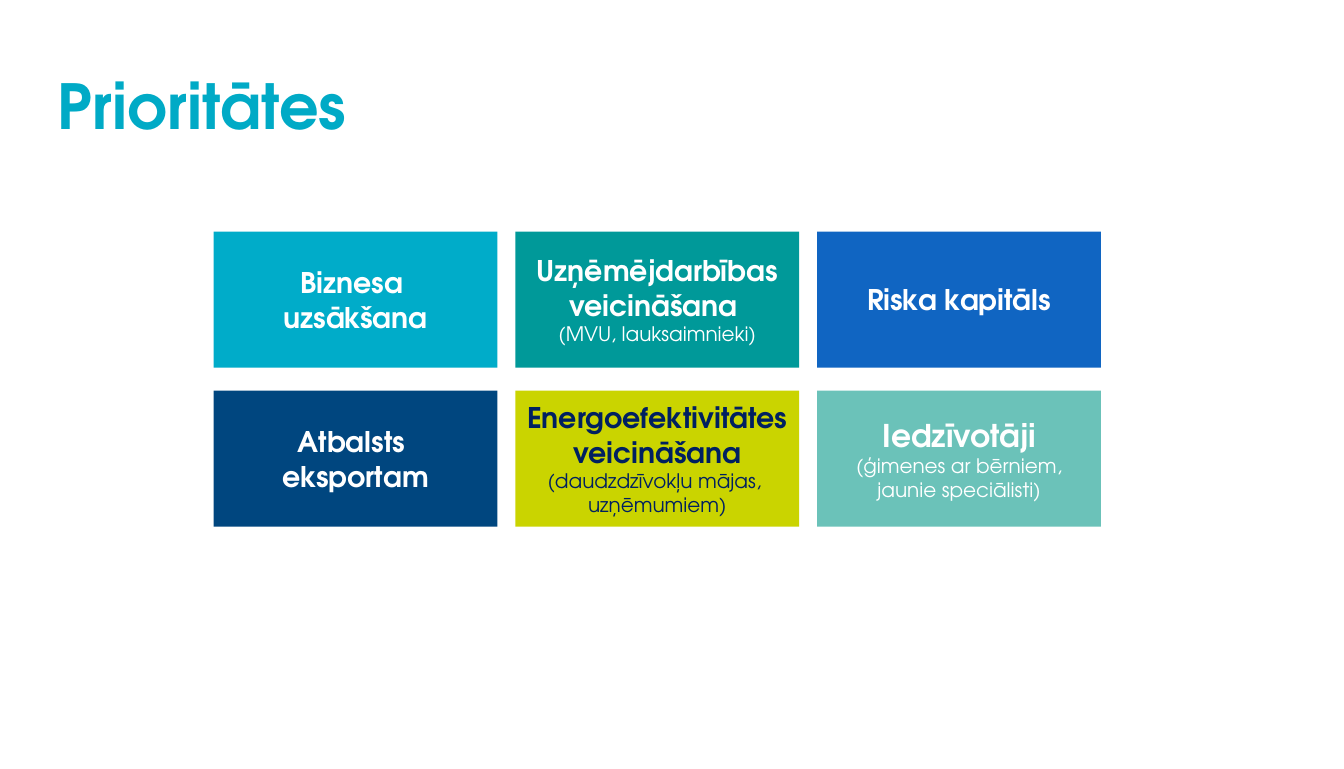
"""Builds the slide of six funding priorities."""
from dataclasses import dataclass

from pptx import Presentation
from pptx.dml.color import RGBColor
from pptx.enum.shapes import MSO_SHAPE
from pptx.enum.text import MSO_ANCHOR, PP_ALIGN
from pptx.slide import Slide
from pptx.text.text import TextFrame
from pptx.util import Pt

RECTANGLE = MSO_SHAPE.RECTANGLE
TOP, MIDDLE = MSO_ANCHOR.TOP, MSO_ANCHOR.MIDDLE
LEFT, CENTER = PP_ALIGN.LEFT, PP_ALIGN.CENTER


@dataclass(frozen=True)
class Theme:
    """Colours and type sizes of the slide."""
    font: str = "TeX Gyre Adventor"
    title: str = "00AAC6"
    white: str = "FFFFFF"
    navy: str = "002060"
    cyan: str = "00ACC9"
    teal: str = "009999"
    blue: str = "1065C2"
    deep_blue: str = "00467F"
    lime: str = "CAD400"
    mint: str = "6BC2B9"
    title_size: float = 50
    heading_size: float = 22.9
    large_heading_size: float = 25.2
    detail_size: float = 16.1


@dataclass(frozen=True)
class Grid:
    """Placement of the priority boxes in points."""
    left: float = 172
    top: float = 186.5
    width: float = 228.5
    height: float = 109.5
    column_gap: float = 14.5
    row_gap: float = 18.5
    columns: int = 3


@dataclass(frozen=True)
class Priority:
    """One box with bold headings and lighter details."""
    fill: str
    headings: tuple[str, ...]
    details: tuple[str, ...] = ()
    color: str = Theme.white
    heading_size: float = Theme.heading_size


THEME = Theme()
GRID = Grid()
PRIORITIES = (
    Priority(THEME.cyan, ("Biznesa ", "uzsākšana")),
    Priority(THEME.teal, ("Uzņēmējdarbības veicināšana ",), ("(MVU, lauksaimnieki)",)),
    Priority(THEME.blue, ("Riska kapitāls",)),
    Priority(THEME.deep_blue, ("Atbalsts ", "eksportam")),
    Priority(THEME.lime, ("Energoefektivitātes veicināšana",),
             ("(daudzdzīvokļu mājas, ", "uzņēmumiem)"), color=THEME.navy),
    Priority(THEME.mint, ("Iedzīvotāji",), ("(ģimenes ar bērniem, jaunie speciālisti)",),
             heading_size=THEME.large_heading_size),
)


def write_line(frame: TextFrame, text: str, size: float, color: str,
               bold: bool, align: PP_ALIGN) -> None:
    """Write one paragraph, using the empty first one when available."""
    first = frame.paragraphs[0]
    para = frame.add_paragraph() if first.runs else first
    para.alignment = align
    span = para.add_run()
    span.text = text
    span.font.name = THEME.font
    span.font.size = Pt(size)
    span.font.bold = bold
    span.font.color.rgb = RGBColor.from_string(color)


def add_title(page: Slide, text: str) -> None:
    """Add the slide title."""
    box = page.shapes.add_textbox(Pt(39.6), Pt(50.4), Pt(978.5), Pt(67))
    frame = box.text_frame
    frame.word_wrap = True
    frame.vertical_anchor = TOP
    write_line(frame, text, THEME.title_size, THEME.title, True, LEFT)


def add_priority(page: Slide, index: int, priority: Priority) -> None:
    """Draw a priority box in its grid cell."""
    row, column = divmod(index, GRID.columns)
    left = GRID.left + column * (GRID.width + GRID.column_gap)
    top = GRID.top + row * (GRID.height + GRID.row_gap)
    box = page.shapes.add_shape(RECTANGLE, Pt(left), Pt(top), Pt(GRID.width), Pt(GRID.height))
    box.shadow.inherit = False
    box.fill.solid()
    box.fill.fore_color.rgb = RGBColor.from_string(priority.fill)
    box.line.fill.background()
    frame = box.text_frame
    frame.word_wrap = True
    frame.vertical_anchor = MIDDLE
    for heading in priority.headings:
        write_line(frame, heading, priority.heading_size, priority.color, True, CENTER)
    for detail in priority.details:
        write_line(frame, detail, THEME.detail_size, priority.color, False, CENTER)


def main() -> None:
    """Build and save the deck."""
    deck = Presentation()
    deck.slide_width, deck.slide_height = Pt(1082.16), Pt(619.2)
    page = deck.slides.add_slide(deck.slide_layouts[6])
    add_title(page, "Prioritātes")
    for index, priority in enumerate(PRIORITIES):
        add_priority(page, index, priority)
    deck.save("out.pptx")


if __name__ == "__main__":
    main()
